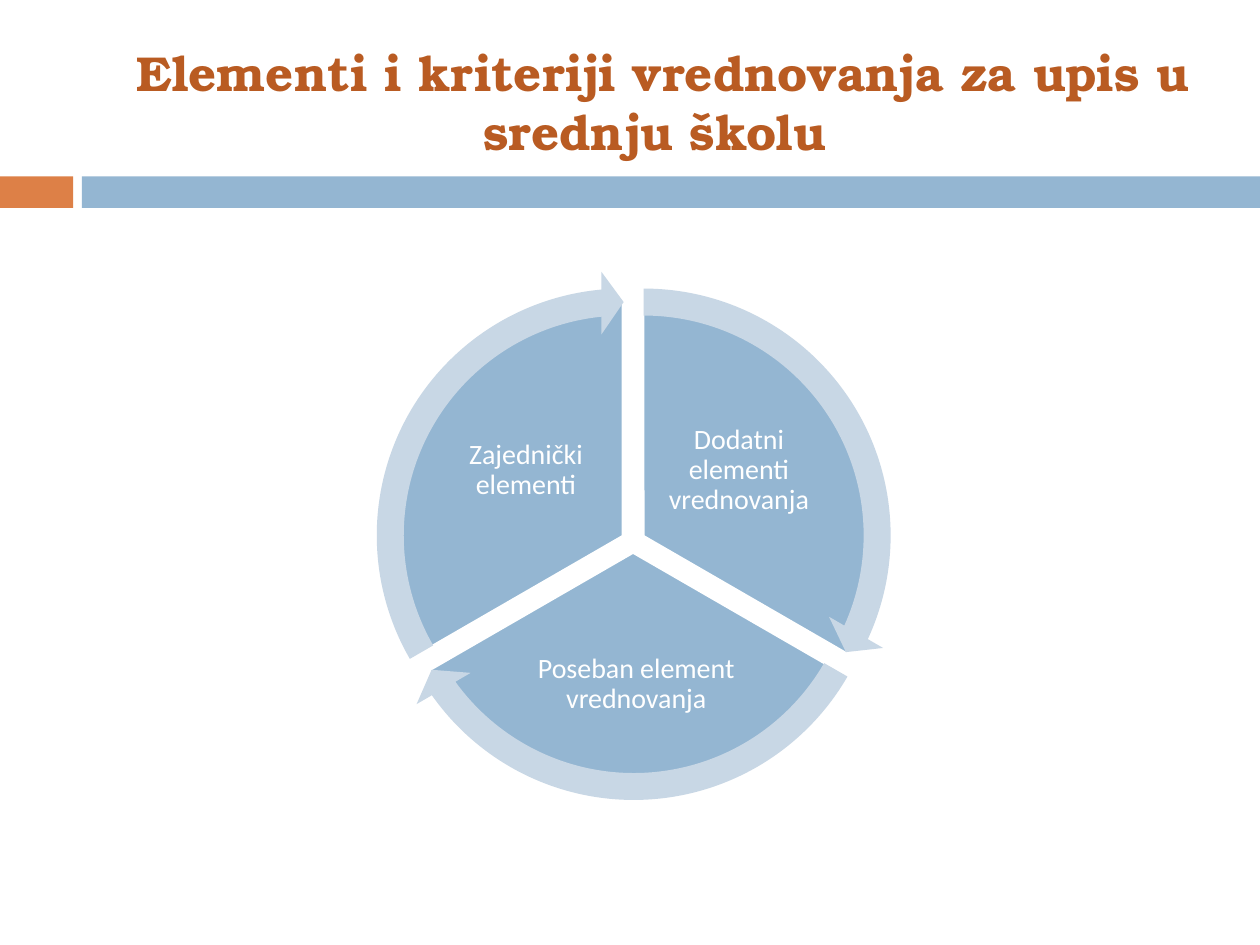
from pptx import Presentation
from pptx.dml.color import RGBColor
from pptx.enum import shapes, text
from pptx.util import Inches, Pt

BLUE = RGBColor(0x94, 0xB6, 0xD2)
PALE = RGBColor(0xC8, 0xD7, 0xE5)
ORANGE = RGBColor(0xDD, 0x80, 0x47)
RUST = RGBColor(0xB9, 0x5B, 0x22)
WHITE = RGBColor(0xFF, 0xFF, 0xFF)
KIND = shapes.MSO_SHAPE
PIE, RING = 3.73, 4.2  # diameters

# pie left, top, angles; label box and words; arrow left, top, angles
PARTS = [
    (3.24, 2.39, (162, 18), (5.2, 3.18, 1.33, 1.11),
     "Dodatni elementi vrednovanja", 3.01, 2.15, (14.725, 161.994)),
    (3.16, 2.52, (18, 90), (4.05, 4.94, 2, 0.98),
     "Poseban element vrednovanja", 2.93, 2.29, (86.72, 18.005)),
    (3.08, 2.39, (90, 162), (3.51, 3.18, 1.33, 1.11),
     "Zajednički elementi", 2.85, 2.15, (158.73, 90)),
]

deck = Presentation()
deck.slide_width, deck.slide_height = Inches(10), Inches(7.5)
slide = deck.slides.add_slide(deck.slide_layouts[5])


def draw(kind, box, color, angles=()):
    shape = slide.shapes.add_shape(kind, *map(Inches, box))
    shape.shadow.inherit = False
    shape.fill.solid()
    shape.fill.fore_color.rgb = color
    shape.line.fill.background()
    for i, angle in enumerate(angles):
        shape.adjustments[i] = angle
    return shape


def write(frame, words, font, size, color):
    """Put one centred run into a text frame and return its paragraph."""
    frame.word_wrap = True
    frame.auto_size = text.MSO_AUTO_SIZE.NONE
    para = frame.paragraphs[0]
    para.alignment = text.PP_ALIGN.CENTER
    run = para.add_run()
    run.text = words
    run.font.name = font
    run.font.size = Pt(size)
    run.font.color.rgb = color
    return para


# Title
title = slide.shapes.title
title.left, title.top = Inches(0.51), Inches(0.29)
title.width, title.height = Inches(9.38), Inches(5.83)
title.text_frame.vertical_anchor = text.MSO_ANCHOR.TOP
para = write(title.text_frame, "Elementi i kriteriji vrednovanja za upis u srednju školu ",
             "TeX Gyre Bonum", 28, RUST)
para.runs[0].font.bold = True
para.space_before = Pt(7)
para._p.get_or_add_pPr().set("marL", str(Inches(0.12)))

# Band under the title
draw(KIND.RECTANGLE, (0, 1.4, 0.58, 0.25), ORANGE)
draw(KIND.RECTANGLE, (0.65, 1.4, 9.35, 0.25), BLUE)

# Three slices with their labels
for left, top, angles, box, words, *_ in PARTS:
    slice_ = draw(KIND.PIE, (left, top, PIE, PIE), BLUE, angles)
    slice_.line.color.rgb = WHITE
    slice_.line.width = Pt(1.5)
    frame = slide.shapes.add_textbox(*map(Inches, box)).text_frame
    frame.margin_left = frame.margin_right = Inches(0.02)
    frame.margin_top = frame.margin_bottom = Inches(0.02)
    frame.vertical_anchor = text.MSO_ANCHOR.MIDDLE
    write(frame, words, "Calibri", 16, WHITE).line_spacing = 0.9

# Arrows around the circle
for *_, left, top, (end, start) in PARTS:
    draw(KIND.CIRCULAR_ARROW, (left, top, RING, RING), PALE,
         (0.051, 3.275, end, start, 0.059))

deck.save("out.pptx")
